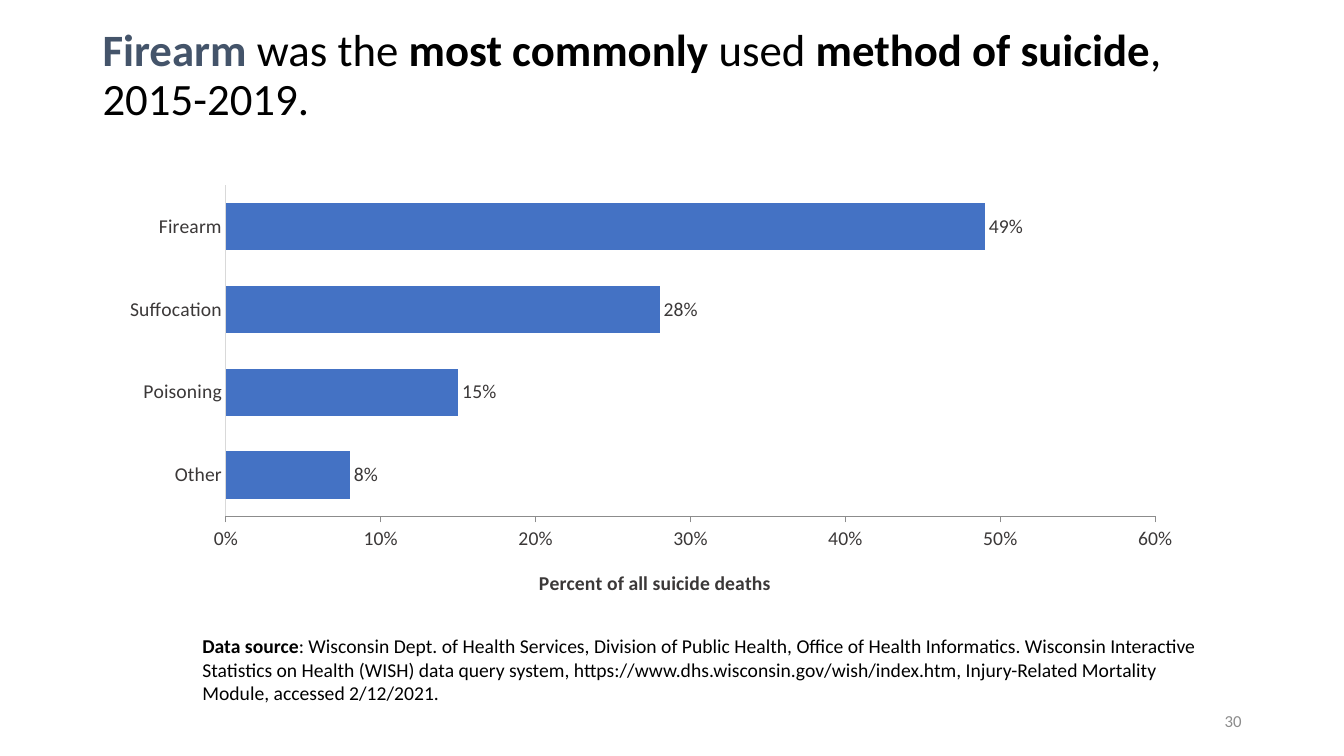
from lxml import etree
from pptx import Presentation
from pptx.chart.data import CategoryChartData
from pptx.dml.color import RGBColor
from pptx.enum.chart import XL_CHART_TYPE, XL_LABEL_POSITION, XL_TICK_MARK
from pptx.enum.text import MSO_ANCHOR, MSO_AUTO_SIZE, PP_ALIGN
from pptx.oxml.ns import qn
from pptx.util import Cm, Pt

BAR_CLUSTERED = XL_CHART_TYPE.BAR_CLUSTERED
OUTSIDE_END = XL_LABEL_POSITION.OUTSIDE_END
TICK_NONE, TICK_OUTSIDE = XL_TICK_MARK.NONE, XL_TICK_MARK.OUTSIDE
MIDDLE = MSO_ANCHOR.MIDDLE
FIT_SHAPE, NO_FIT = MSO_AUTO_SIZE.SHAPE_TO_FIT_TEXT, MSO_AUTO_SIZE.NONE
LEFT, RIGHT = PP_ALIGN.LEFT, PP_ALIGN.RIGHT

FONT = "Calibri"
BLACK = RGBColor(0x00, 0x00, 0x00)
SLATE = RGBColor(0x44, 0x54, 0x6A)
BLUE = RGBColor(0x44, 0x72, 0xC4)
CHARCOAL = RGBColor(0x3B, 0x38, 0x38)
GRAY = RGBColor(0x8C, 0x8C, 0x8C)
PALE_GRAY = RGBColor(0xD9, 0xD9, 0xD9)

METHOD_SHARES = {"Other": 0.08, "Poisoning": 0.15, "Suffocation": 0.28, "Firearm": 0.49}
HEADLINE = [
    ("Firearm", True, SLATE),
    (" was the ", False, BLACK),
    ("most commonly", True, BLACK),
    (" used ", False, BLACK),
    ("method of suicide", True, BLACK),
    (", 2015-2019.", False, BLACK),
]
SOURCE = [
    ("Data source", True, BLACK),
    (
        ": Wisconsin Dept. of Health Services, Division of Public Health, "
        "Office of Health Informatics. Wisconsin Interactive Statistics on Health "
        "(WISH) data query system, https://www.dhs.wisconsin.gov/wish/index.htm, "
        "Injury-Related Mortality Module, accessed 2/12/2021.",
        False,
        BLACK,
    ),
]


def set_font(font, size, color):
    font.name = FONT
    font.size = Pt(size)
    font.color.rgb = color


def write_runs(paragraph, pieces, size, align):
    paragraph.alignment = align
    paragraph.font.name = FONT
    paragraph.font.size = Pt(size)
    for text, bold, color in pieces:
        run = paragraph.add_run()
        run.text = text
        run.font.bold = bold
        run.font.color.rgb = color


def add_headline(slide, left, top, width, height):
    title = slide.shapes.title
    title.left, title.top, title.width, title.height = left, top, width, height
    frame = title.text_frame
    frame.auto_size = NO_FIT
    frame.vertical_anchor = MIDDLE
    paragraph = frame.paragraphs[0]
    paragraph.line_spacing = 0.9
    write_runs(paragraph, HEADLINE, 32, LEFT)


def place_in_chart(parent, index, **settings):
    for old in parent.findall(qn("c:layout")):
        parent.remove(old)
    layout = etree.Element(qn("c:layout"))
    manual = etree.SubElement(layout, qn("c:manualLayout"))
    for name, value in settings.items():
        etree.SubElement(manual, qn(f"c:{name}")).set("val", str(value))
    parent.insert(index, layout)


def add_method_chart(slide, left, top, width, height):
    data = CategoryChartData(number_format="0%")
    data.categories = list(METHOD_SHARES)
    data.add_series("Series 1", list(METHOD_SHARES.values()))
    chart = slide.shapes.add_chart(BAR_CLUSTERED, left, top, width, height, data).chart
    chart.has_legend = False
    chart.has_title = False
    set_font(chart.font, 14, CHARCOAL)

    plot = chart.plots[0]
    plot.gap_width = 75
    plot.vary_by_categories = False
    shares = plot.series[0]
    shares.format.fill.solid()
    shares.format.fill.fore_color.rgb = BLUE
    labels = shares.data_labels
    labels.show_value = True
    labels.number_format = "0%"
    labels.number_format_is_linked = False
    labels.position = OUTSIDE_END
    set_font(labels.font, 14, CHARCOAL)

    methods, percents = chart.category_axis, chart.value_axis
    for axis, tick, color in (
        (methods, TICK_NONE, PALE_GRAY),
        (percents, TICK_OUTSIDE, GRAY),
    ):
        axis.has_major_gridlines = False
        axis.major_tick_mark = tick
        axis.minor_tick_mark = TICK_NONE
        axis.format.line.color.rgb = color
        axis.format.line.width = Pt(0.75)
        set_font(axis.tick_labels.font, 14, CHARCOAL)
    percents.minimum_scale = 0
    percents.maximum_scale = 0.6
    percents.major_unit = 0.1
    percents.tick_labels.number_format = "0%"
    percents.tick_labels.number_format_is_linked = False
    caption = percents.axis_title.text_frame.paragraphs[0]
    caption.text = "Percent of all suicide deaths"
    set_font(caption.font, 14, CHARCOAL)
    caption.font.bold = True

    plot_area = chart.element.xpath("c:chart/c:plotArea")[0]
    place_in_chart(plot_area, 0, layoutTarget="inner", xMode="edge", yMode="edge",
                   x=0.108, y=0.02, w=0.856, h=0.762)
    axis_title = plot_area.xpath("c:valAx/c:title")[0]
    place_in_chart(axis_title, 1, xMode="edge", yMode="edge", x=0.393, y=0.895)


def add_source(slide, left, top, width, height):
    frame = slide.shapes.add_textbox(left, top, width, height).text_frame
    frame.word_wrap = True
    frame.auto_size = FIT_SHAPE
    write_runs(frame.paragraphs[0], SOURCE, 14, LEFT)


def add_page_number(slide, left, top, width, height):
    frame = slide.shapes.add_textbox(left, top, width, height).text_frame
    frame.word_wrap = True
    frame.vertical_anchor = MIDDLE
    write_runs(frame.paragraphs[0], [("30", False, GRAY)], 12, RIGHT)


def main():
    deck = Presentation()
    deck.slide_width, deck.slide_height = Cm(33.87), Cm(19.05)
    slide = deck.slides.add_slide(deck.slide_layouts.get_by_name("Title Only"))
    add_headline(slide, Cm(2.33), Cm(0.48), Cm(29.21), Cm(2.9))
    add_source(slide, Cm(4.85), Cm(15.85), Cm(25.76), Cm(2.82))
    add_method_chart(slide, Cm(2.74), Cm(4.45), Cm(27.36), Cm(10.95))
    add_page_number(slide, Cm(23.92), Cm(17.66), Cm(7.62), Cm(1.01))
    deck.save("out.pptx")


if __name__ == "__main__":
    main()
